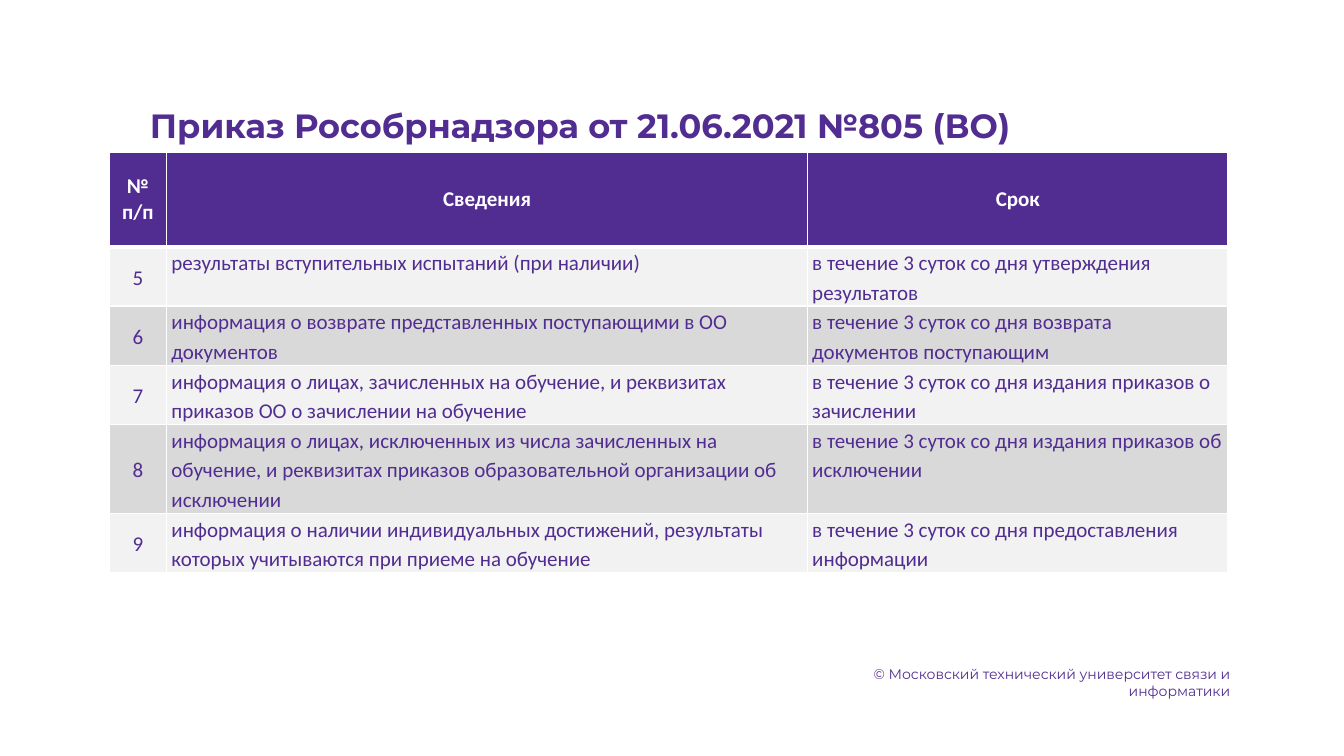
from lxml.etree import SubElement
from pptx import Presentation
from pptx.dml.color import RGBColor
from pptx.enum.text import MSO_ANCHOR, PP_ALIGN
from pptx.oxml.ns import qn
from pptx.util import Cm, Pt

COLORS = {
    "purple": "522D91",
    "footer": "522E91",
    "white": "FFFFFF",
    "light": "F2F2F2",
    "dark": "D9D9D9",
}
HEADINGS = ["№ п/п", "Сведения", "Срок"]
FIRST_NUMBER = 5
REQUIREMENTS = [
    ("результаты вступительных испытаний (при наличии)",
     "в течение 3 суток со дня утверждения результатов"),
    ("информация о возврате представленных поступающими в ОО документов",
     "в течение 3 суток со дня возврата документов поступающим"),
    ("информация о лицах, зачисленных на обучение, и реквизитах приказов ОО "
     "о зачислении на обучение",
     "в течение 3 суток со дня издания приказов о зачислении"),
    ("информация о лицах, исключенных из числа зачисленных на обучение, "
     "и реквизитах приказов образовательной организации об исключении",
     "в течение 3 суток со дня издания приказов об исключении"),
    ("информация о наличии индивидуальных достижений, результаты которых "
     "учитываются при приеме на обучение",
     "в течение 3 суток со дня предоставления информации"),
]
COLUMN_WIDTHS = [1.45, 16.15, 10.6]
ROW_HEIGHTS = [2.38, 1.49, 1.49, 1.49, 2.24, 1.49]


def write_text(paragraph, text, font_name, size, color, bold=False,
               alignment=PP_ALIGN.LEFT):
    paragraph.alignment = alignment
    run = paragraph.add_run()
    run.text = text
    run.font.name = font_name
    run.font.size = Pt(size)
    run.font.bold = bold
    run.font.color.rgb = RGBColor.from_string(COLORS[color])


def add_text_box(slide, box, text, size, color, **style):
    shape = slide.shapes.add_textbox(*(Cm(length) for length in box))
    shape.text_frame.word_wrap = True
    write_text(shape.text_frame.paragraphs[0], text, "Montserrat", size, color, **style)


def set_borders(cell, bottom_width):
    """Draw white cell borders; they must precede the fill in the cell XML."""
    properties = cell._tc.get_or_add_tcPr()
    for side, width in (("L", 1), ("R", 1), ("T", 1), ("B", bottom_width)):
        line = SubElement(properties, qn(f"a:ln{side}"), w=str(Pt(width)))
        fill = SubElement(line, qn("a:solidFill"))
        SubElement(fill, qn("a:srgbClr"), val=COLORS["white"])


def fill_cell(cell, text, is_header, is_centered, background):
    set_borders(cell, 3 if is_header else 1)
    cell.fill.solid()
    cell.fill.fore_color.rgb = RGBColor.from_string(COLORS[background])
    cell.vertical_anchor = MSO_ANCHOR.MIDDLE if is_centered else MSO_ANCHOR.TOP
    cell.margin_left = cell.margin_right = Cm(0.03 if is_centered else 0.12)
    cell.margin_top = cell.margin_bottom = Cm(0.03 if is_centered else 0)
    paragraph = cell.text_frame.paragraphs[0]
    if not is_header:
        paragraph.line_spacing = 1.15
    write_text(paragraph, text, "Calibri", 15, "white" if is_header else "purple",
               bold=is_header,
               alignment=PP_ALIGN.CENTER if is_centered else PP_ALIGN.LEFT)


def add_requirements_table(slide, left, top):
    rows = [HEADINGS] + [
        (str(number), *requirement)
        for number, requirement in enumerate(REQUIREMENTS, FIRST_NUMBER)
    ]
    table = slide.shapes.add_table(
        len(rows), len(HEADINGS), Cm(left), Cm(top),
        Cm(sum(COLUMN_WIDTHS)), Cm(sum(ROW_HEIGHTS))).table
    for column, width in zip(table.columns, COLUMN_WIDTHS):
        column.width = Cm(width)
    for row, height in zip(table.rows, ROW_HEIGHTS):
        row.height = Cm(height)
    for row_index, texts in enumerate(rows):
        is_header = row_index == 0
        background = "purple" if is_header else ("dark", "light")[row_index % 2]
        for column_index, text in enumerate(texts):
            fill_cell(table.cell(row_index, column_index), text, is_header,
                      is_header or column_index == 0, background)


def main():
    presentation = Presentation()
    presentation.slide_width = Cm(33.87)
    presentation.slide_height = Cm(19.05)
    slide = presentation.slides.add_slide(presentation.slide_layouts[6])
    add_requirements_table(slide, 2.75, 3.84)
    add_text_box(slide, (3.53, 2.52, 24.2, 1.28),
                 "Приказ Рособрнадзора от 21.06.2021 №805 (ВО)", 24, "purple", bold=True)
    add_text_box(slide, (21.06, 16.64, 10.19, 0.68),
                 "© Московский технический университет связи и информатики",
                 10, "footer", alignment=PP_ALIGN.RIGHT)
    presentation.save("out.pptx")


if __name__ == "__main__":
    main()
